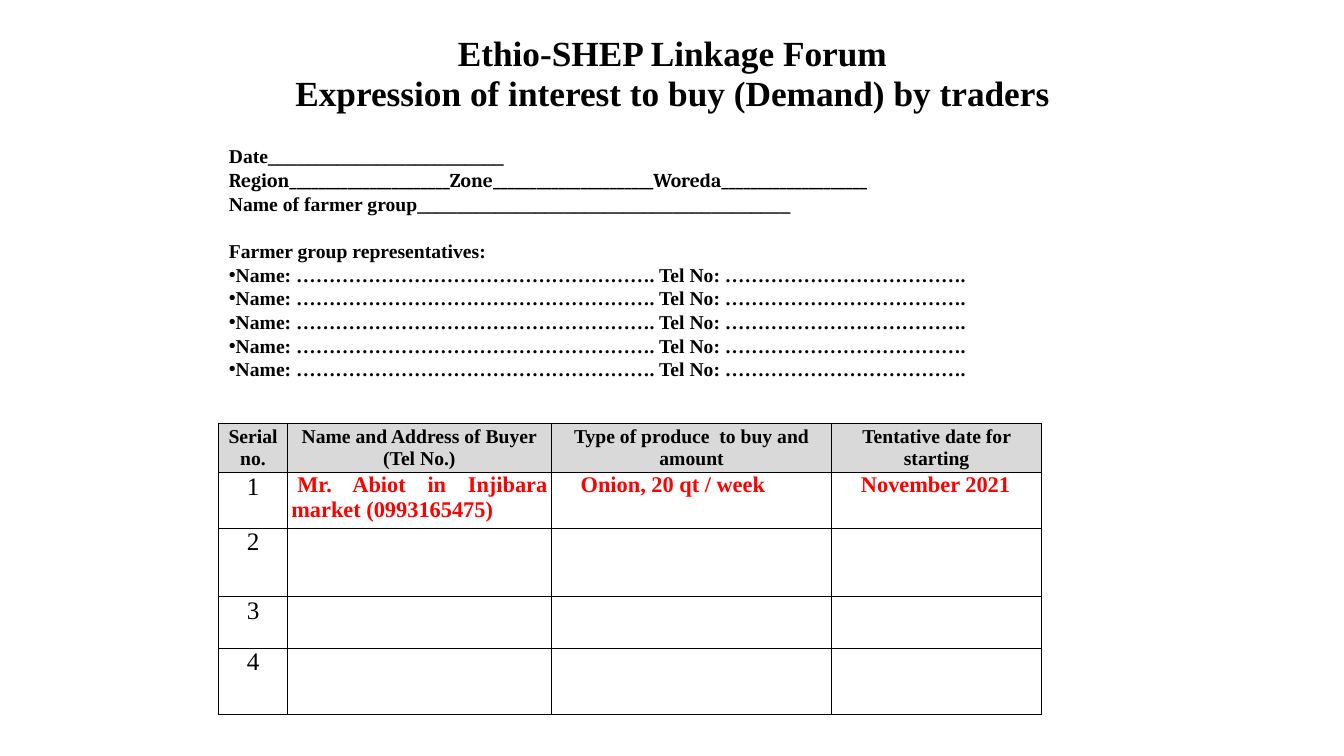
from lxml import etree
from pptx import Presentation
from pptx.dml.color import RGBColor
from pptx.enum import text
from pptx.oxml.ns import qn
from pptx.util import Inches, Pt

SERIF = "Times New Roman"
BLACK, RED, GREY = "000000", "FF0000", "D9D9D9"
CENTER, JUSTIFY = text.PP_ALIGN.CENTER, text.PP_ALIGN.JUSTIFY
TITLE = ["Ethio-SHEP Linkage Forum",
         "Expression of interest to buy (Demand) by traders"]
NAME_LINE = "Name: ………………………………………………. Tel No: ………………………………."
HEADERS = ["Serial no.", "Name and Address of Buyer\n(Tel No.)",
           "Type of produce  to buy and amount", "Tentative date for starting"]
# Text, left margin and first-line indent in inches
OFFER = [("Mr. Abiot in Injibara market (0993165475)", 0, 0.06),
         ("Onion, 20 qt / week", 0.25, 0), ("November 2021", 0.25, 0)]
COL_WIDTHS = [0.68, 2.62, 2.78, 2.08]
ROW_HEIGHTS = [0.49, 0.55, 0.68, 0.51, 0.66]


def rgb(value):
    return RGBColor.from_string(value)


def set_attrs(obj, values):
    for name, value in values.items():
        setattr(obj, name, value)


def place(sp, left, top, width, height):
    set_attrs(sp, {"left": Inches(left), "top": Inches(top),
                   "width": Inches(width), "height": Inches(height)})


def write(p, words, size, color=BLACK, bold=True, font=SERIF, **layout):
    """Put one run in a paragraph; layout holds paragraph attributes."""
    set_attrs(p, {"space_before": Pt(0), "space_after": Pt(0), **layout})
    r = p.add_run()
    r.text = words
    set_attrs(r.font, {"size": Pt(size), "bold": bold, "name": font})
    r.font.color.rgb = rgb(color)


def paragraphs(tf, count):
    return [tf.paragraphs[0]] + [tf.add_paragraph() for _ in range(count - 1)]


def set_indent(p, left, first):
    pPr = p._p.get_or_add_pPr()
    pPr.set("marL", str(Inches(left)))
    pPr.set("indent", str(Inches(first)))


def set_bullet(p, char=None):
    set_indent(p, 0, 0)
    pPr = p._p.get_or_add_pPr()
    if char:
        etree.SubElement(pPr, qn("a:buChar")).set("char", char)
    else:
        etree.SubElement(pPr, qn("a:buNone"))


def set_borders(cell):
    tcPr = cell._tc.get_or_add_tcPr()
    for i, side in enumerate(("lnL", "lnR", "lnT", "lnB")):
        ln = etree.Element(qn(f"a:{side}"), w=str(Pt(1)))
        fill = etree.SubElement(ln, qn("a:solidFill"))
        etree.SubElement(fill, qn("a:srgbClr")).set("val", BLACK)
        tcPr.insert(i, ln)


def format_frame(tf):
    set_attrs(tf, {"word_wrap": True, "auto_size": text.MSO_AUTO_SIZE.NONE,
                   "vertical_anchor": text.MSO_ANCHOR.TOP})


def add_title(slide):
    sp = slide.shapes.title
    place(sp, 0.67, 0.3, 12, 1.05)
    format_frame(sp.text_frame)
    for p, line in zip(paragraphs(sp.text_frame, len(TITLE)), TITLE):
        write(p, line, 25.2, alignment=CENTER, line_spacing=0.93)


def add_form(slide):
    sp = slide.placeholders[1]
    place(sp, 2.17, 1.38, 8.17, 2.69)
    format_frame(sp.text_frame)
    blanks = [("Region", 22), ("Zone", 22), ("Woreda", 20)]
    region = "".join(label + "_" * n for label, n in blanks)
    lines = [("Date" + "_" * 24, {}),
             (region, {"font": "Cambria"}),
             ("Name of farmer group" + "_" * 38, {}),
             ("Farmer group representatives:", {"space_before": Pt(16.9)})]
    lines += [(NAME_LINE, {})] * 5
    for p, (line, extra) in zip(paragraphs(sp.text_frame, len(lines)), lines):
        write(p, line, 14, line_spacing=Pt(16.9),
              alignment=text.PP_ALIGN.LEFT, **extra)
        set_bullet(p, "•" if line == NAME_LINE else None)


def format_cell(cell, is_header):
    set_attrs(cell, {"margin_left": Inches(0.04), "margin_right": Inches(0.04),
                     "margin_top": 0, "margin_bottom": 0})
    if is_header:
        cell.vertical_anchor = text.MSO_ANCHOR.MIDDLE
        cell.fill.solid()
        cell.fill.fore_color.rgb = rgb(GREY)
    else:
        cell.fill.background()
    set_borders(cell)


def add_demand_table(slide):
    frame = slide.shapes.add_table(
        len(ROW_HEIGHTS), len(COL_WIDTHS), Inches(2.17), Inches(4.2),
        Inches(sum(COL_WIDTHS)), Inches(sum(ROW_HEIGHTS)))
    table = frame.table
    set_attrs(table, {"first_row": False, "horz_banding": False})
    for col, width in zip(table.columns, COL_WIDTHS):
        col.width = Inches(width)
    for i, height in enumerate(ROW_HEIGHTS):
        table.rows[i].height = Inches(height)
        for cell in table.rows[i].cells:
            format_cell(cell, i == 0)
        if i:
            write(table.cell(i, 0).text_frame.paragraphs[0], str(i), 18,
                  bold=False, alignment=CENTER)
    for col, header in enumerate(HEADERS):
        lines = header.split("\n")
        tf = table.cell(0, col).text_frame
        for p, line in zip(paragraphs(tf, len(lines)), lines):
            write(p, line, 14, alignment=CENTER)
    for col, (words, left, first) in enumerate(OFFER, 1):
        p = table.cell(1, col).text_frame.paragraphs[0]
        write(p, words, 16, RED, alignment=JUSTIFY)
        set_indent(p, left, first)


def main():
    prs = Presentation()
    set_attrs(prs, {"slide_width": Inches(13.33), "slide_height": Inches(7.5)})
    slide = prs.slides.add_slide(prs.slide_layouts[1])
    add_title(slide)
    add_form(slide)
    add_demand_table(slide)
    prs.save("out.pptx")


if __name__ == "__main__":
    main()
